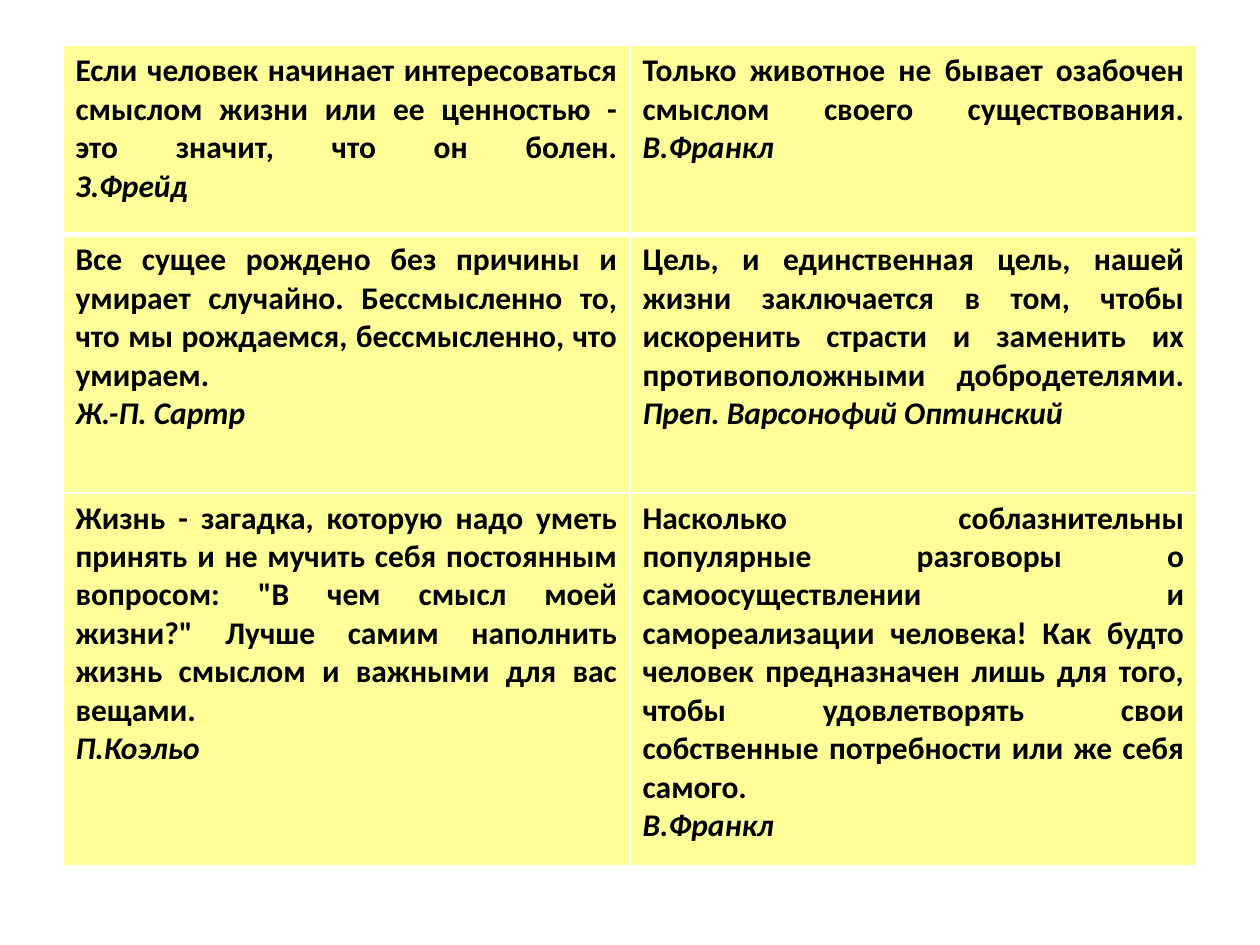
from dataclasses import dataclass

from lxml.etree import SubElement
from pptx import Presentation
from pptx.dml.color import RGBColor
from pptx.enum.text import PP_ALIGN
from pptx.oxml.ns import qn
from pptx.slide import Slide
from pptx.util import Pt

COLORS = {"paper": "FFFF99", "text": "000000", "border": "FFFFFF"}

QUOTES = [
    [
        ("Если человек начинает интересоваться смыслом жизни или ее ценностью - "
         "это значит, что он болен.", "З.Фрейд"),
        ("Только животное не бывает озабочен смыслом своего существования.",
         "В.Франкл"),
    ],
    [
        ("Все сущее рождено без причины и умирает случайно. Бессмысленно то, "
         "что мы рождаемся, бессмысленно, что умираем.", "Ж.-П. Сартр"),
        ("Цель, и единственная цель, нашей жизни заключается в том, чтобы "
         "искоренить страсти и заменить их противоположными добродетелями.",
         "Преп. Варсонофий Оптинский"),
    ],
    [
        ("Жизнь - загадка, которую надо уметь принять и не мучить себя постоянным "
         "вопросом: \"В чем смысл моей жизни?\" Лучше самим наполнить жизнь "
         "смыслом и важными для вас вещами.", "П.Коэльо"),
        ("Насколько соблазнительны популярные разговоры о самоосуществлении и "
         "самореализации человека! Как будто человек предназначен лишь для того, "
         "чтобы удовлетворять свои собственные потребности или же себя самого.",
         "В.Франкл"),
    ],
]
ROW_HEIGHTS = [108, 147.6, 213]


@dataclass
class QuotePage:
    page: Slide
    font: str = "Calibri"
    size: float = 18

    def add_span(self, para, text, italic):
        span = para.add_run()
        span.text = text
        span.font.name = self.font
        span.font.size = Pt(self.size)
        span.font.bold = True
        span.font.italic = italic
        span.font.color.rgb = RGBColor.from_string(COLORS["text"])

    def add_borders(self, cell, widths):
        """Draw the cell's edges; widths maps L, R, T and B to points."""
        properties = cell._tc.get_or_add_tcPr()
        for position, (side, width) in enumerate(widths.items()):
            line = SubElement(properties, qn(f"a:ln{side}"), w=str(Pt(width)))
            fill = SubElement(line, qn("a:solidFill"))
            SubElement(fill, qn("a:srgbClr"), val=COLORS["border"])
            properties.insert(position, line)

    def fill_cell(self, cell, quote, author):
        cell.fill.solid()
        cell.fill.fore_color.rgb = RGBColor.from_string(COLORS["paper"])
        para = cell.text_frame.paragraphs[0]
        para.alignment = PP_ALIGN.JUSTIFY
        self.add_span(para, quote, italic=False)
        para.add_line_break()
        self.add_span(para, author, italic=True)

    def add_quote_table(self, quotes, left, top, width, row_heights):
        columns = len(quotes[0])
        table = self.page.shapes.add_table(
            len(quotes), columns, Pt(left), Pt(top), Pt(width), Pt(sum(row_heights))
        ).table
        for column in table.columns:
            column.width = Pt(width / columns)
        for index, (row, height) in enumerate(zip(table.rows, row_heights)):
            row.height = Pt(height)
            widths = {"L": 1, "R": 1, "T": 3 if index == 1 else 1,
                      "B": 3 if index == 0 else 1}
            for cell, (quote, author) in zip(row.cells, quotes[index]):
                self.fill_cell(cell, quote, author)
                self.add_borders(cell, widths)


def main():
    deck = Presentation()
    deck.slide_width, deck.slide_height = Pt(720), Pt(540)
    quote_page = QuotePage(deck.slides.add_slide(deck.slide_layouts[6]))
    quote_page.add_quote_table(QUOTES, left=36, top=26, width=648,
                               row_heights=ROW_HEIGHTS)
    deck.save("out.pptx")


if __name__ == "__main__":
    main()
